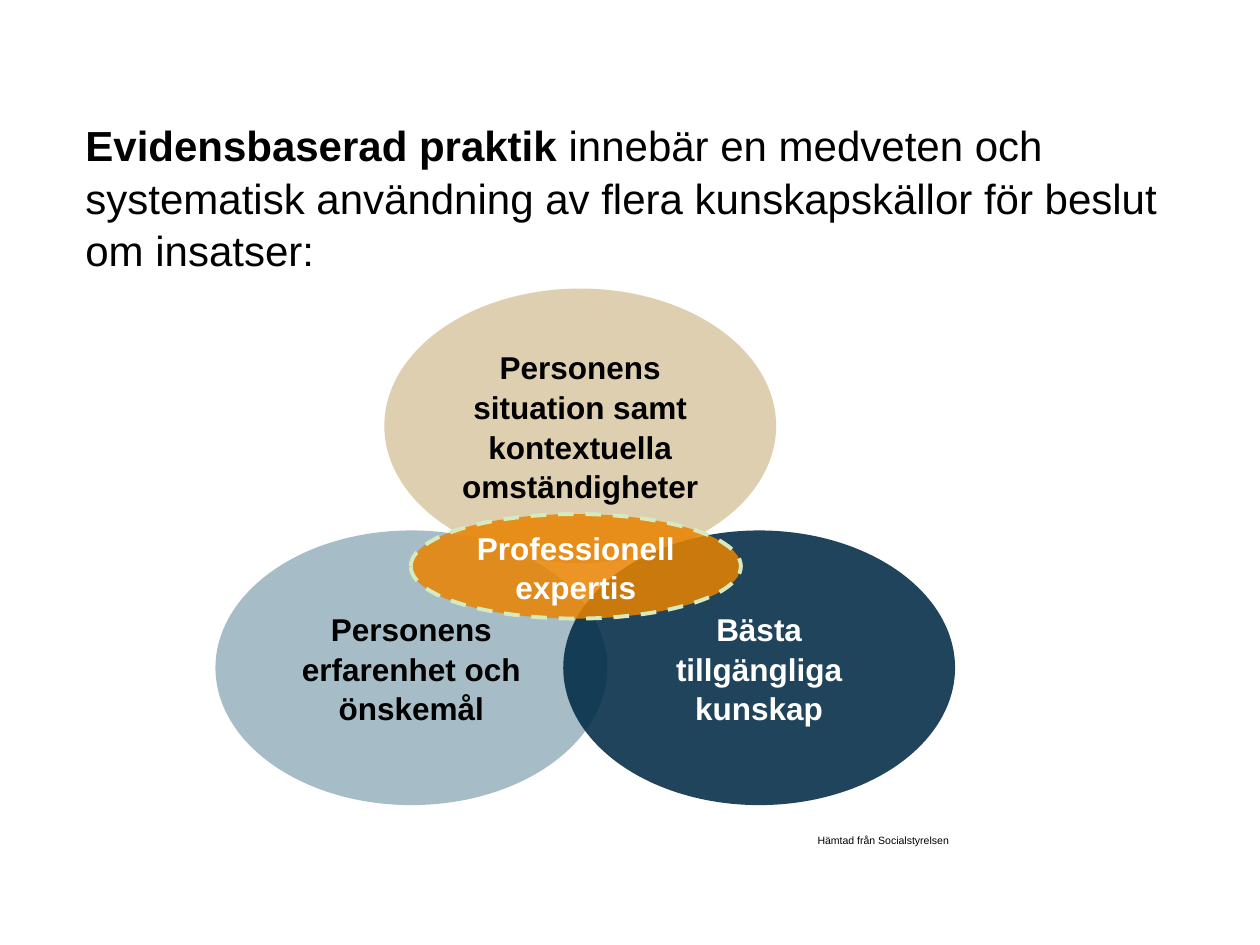
"""Build a slide on the knowledge sources of evidence-based practice."""
import pptx
import pptx.dml.color
import pptx.enum.dml
import pptx.enum.shapes
import pptx.enum.text
import pptx.oxml.ns
import pptx.util
from lxml import etree
from pptx.util import Inches

COLORS = {
    "black": "000000",
    "white": "FFFFFF",
    "wishes": "A6BCC6",
    "situation": "D3BF96",
    "knowledge": "002B45",
    "expertise": "E98300",
    "dash": "D5EABE",
}
SOURCE_SIZE = (3.11, 2.18)
LOWER_TOP = 4.21
SOURCES = [
    ("Personens erfarenhet och önskemål", 1.71, LOWER_TOP, "wishes", 100, "black"),
    ("Personens situation samt kontextuella omständigheter", 3.05, 2.29, "situation", 75, "black"),
    ("Bästa tillgängliga kunskap", 4.47, LOWER_TOP, "knowledge", 88, "white"),
]


def rgb(name):
    return pptx.dml.color.RGBColor.from_string(COLORS[name])


def style_run(run, size, color, bold=False):
    run.font.name = "Arial"
    run.font.size = pptx.util.Pt(size)
    run.font.bold = bold
    run.font.color.rgb = rgb(color)


def add_text(slide, box, parts, size, anchor, spacing=1.0):
    frame = slide.shapes.add_textbox(*map(Inches, box)).text_frame
    frame.word_wrap = True
    frame.vertical_anchor = anchor
    paragraph = frame.paragraphs[0]
    paragraph.line_spacing = spacing
    for words, bold in parts:
        run = paragraph.add_run()
        run.text = words
        style_run(run, size, "black", bold)


def add_ellipse(diagram, label, box, fill, opacity, text_color):
    ellipse = diagram.shapes.add_shape(
        pptx.enum.shapes.MSO_SHAPE.OVAL, *map(Inches, box))
    ellipse.shadow.inherit = False
    ellipse.line.fill.background()
    ellipse.fill.solid()
    ellipse.fill.fore_color.rgb = rgb(fill)
    if opacity < 100:
        tint = ellipse.fill._xPr.find(".//" + pptx.oxml.ns.qn("a:srgbClr"))
        etree.SubElement(tint, pptx.oxml.ns.qn("a:alpha"), val=str(opacity * 1000))
    frame = ellipse.text_frame
    frame.word_wrap = True
    frame.vertical_anchor = pptx.enum.text.MSO_ANCHOR.MIDDLE
    frame.text = label
    paragraph = frame.paragraphs[0]
    paragraph.alignment = pptx.enum.text.PP_ALIGN.CENTER
    paragraph.line_spacing = 1.05
    style_run(paragraph.runs[0], 18, text_color, True)
    return ellipse


def main():
    deck = pptx.Presentation()
    deck.slide_width, deck.slide_height = Inches(10), Inches(7.5)
    slide = deck.slides.add_slide(deck.slide_layouts[6])

    definition = [
        ("Evidensbaserad praktik ", True),
        ("innebär en medveten och systematisk användning av flera "
         "kunskapskällor för beslut om insatser:", False),
    ]
    add_text(slide, (0.58, 0.93, 9, 1.25), definition, 24,
             pptx.enum.text.MSO_ANCHOR.MIDDLE, 1.05)

    diagram = slide.shapes.add_group_shape()
    for label, left, top, fill, opacity, text_color in SOURCES:
        add_ellipse(diagram, label, (left, top, *SOURCE_SIZE), fill, opacity, text_color)
    expertise = add_ellipse(diagram, "Professionell expertis",
                            (3.26, 4.08, 2.62, 0.83), "expertise", 85, "white")
    expertise.line.color.rgb = rgb("dash")
    expertise.line.width = pptx.util.Pt(2.25)
    expertise.line.dash_style = pptx.enum.dml.MSO_LINE.DASH

    add_text(slide, (6.39, 6.57, 1.52, 0.2), [("Hämtad från Socialstyrelsen", False)],
             6, pptx.enum.text.MSO_ANCHOR.TOP)
    deck.save("out.pptx")


if __name__ == "__main__":
    main()
